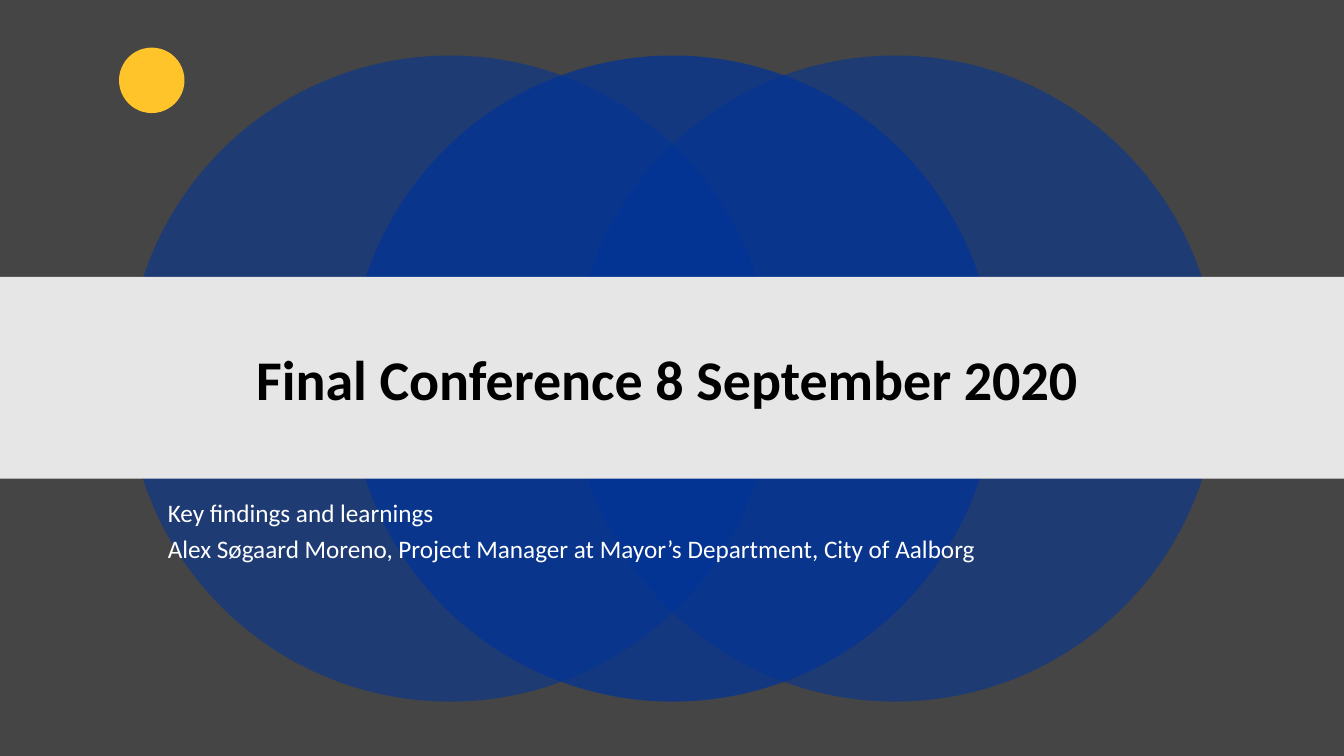
"""Builds the opening slide of a conference talk."""
from lxml import etree
from pptx import Presentation
from pptx.dml.color import RGBColor
from pptx.enum.shapes import MSO_SHAPE
from pptx.enum.text import MSO_ANCHOR, PP_ALIGN
from pptx.oxml.ns import qn
from pptx.util import Cm, Pt

ELLIPSE, RECTANGLE = MSO_SHAPE.OVAL, MSO_SHAPE.RECTANGLE
TOP, MIDDLE = MSO_ANCHOR.TOP, MSO_ANCHOR.MIDDLE
LEFT, CENTER = PP_ALIGN.LEFT, PP_ALIGN.CENTER

SLIDE_WIDTH, SLIDE_HEIGHT = 33.87, 19.05
CIRCLE_LEFT, CIRCLE_TOP, CIRCLE_SIZE, CIRCLE_STEP = 3.2, 1.4, 16.28, 5.61
TEXT_LEFT, TEXT_WIDTH = 4.23, 25.4


def set_fill(fill, color):
    """Fill solidly with a hex colour."""
    fill.solid()
    fill.fore_color.rgb = RGBColor.from_string(color)


def add_plain_shape(slide, kind, left, top, width, height, color, opacity=100):
    """Add a borderless shape, with opacity in percent."""
    shape = slide.shapes.add_shape(kind, Cm(left), Cm(top), Cm(width), Cm(height))
    shape.shadow.inherit = False
    shape.line.fill.background()
    set_fill(shape.fill, color)
    if opacity < 100:
        color_element = shape._element.spPr.find(qn("a:solidFill"))[0]
        etree.SubElement(color_element, qn("a:alpha"), val=str(opacity * 1000))


def add_text(slide, top, height, lines, size, color, bold=False,
             alignment=LEFT, anchor=TOP, space_after=0):
    """Add a text box with one paragraph per line."""
    box = slide.shapes.add_textbox(Cm(TEXT_LEFT), Cm(top), Cm(TEXT_WIDTH), Cm(height))
    frame = box.text_frame
    frame.word_wrap = True
    frame.vertical_anchor = anchor
    frame.margin_left, frame.margin_right = Cm(0), Cm(0.25)
    frame.margin_top = frame.margin_bottom = Cm(0.13)
    frame.text = "\n".join(lines)
    for paragraph in frame.paragraphs:
        paragraph.alignment = alignment
        paragraph.line_spacing = 0.9
        paragraph.space_after = Pt(space_after)
        font = paragraph.font
        font.name, font.size, font.bold = "Calibri", Pt(size), bold
        font.color.rgb = RGBColor.from_string(color)


def main():
    """Build and save the slide."""
    presentation = Presentation()
    presentation.slide_width = Cm(SLIDE_WIDTH)
    presentation.slide_height = Cm(SLIDE_HEIGHT)
    slide = presentation.slides.add_slide(presentation.slide_layouts[6])
    set_fill(slide.background.fill, "454545")

    add_plain_shape(slide, ELLIPSE, 3, 1.2, 1.65, 1.65, "FFC429")
    for position, opacity in ((0, 55), (2, 55), (1, 70)):
        add_plain_shape(slide, ELLIPSE, CIRCLE_LEFT + position * CIRCLE_STEP, CIRCLE_TOP,
                        CIRCLE_SIZE, CIRCLE_SIZE, "003399", opacity)
    add_text(slide, 12.5, 2.1,
             ["Key findings and learnings",
              "Alex Søgaard Moreno, Project Manager at Mayor’s Department, City of Aalborg"],
             18, "FFFFFF", space_after=6)
    add_plain_shape(slide, RECTANGLE, 0, 6.98, SLIDE_WIDTH, 5.08, "E7E6E6")
    add_text(slide, 7.72, 3.84, ["Final Conference 8 September 2020"], 40, "000000",
             bold=True, alignment=CENTER, anchor=MIDDLE)

    presentation.save("out.pptx")


if __name__ == "__main__":
    main()
